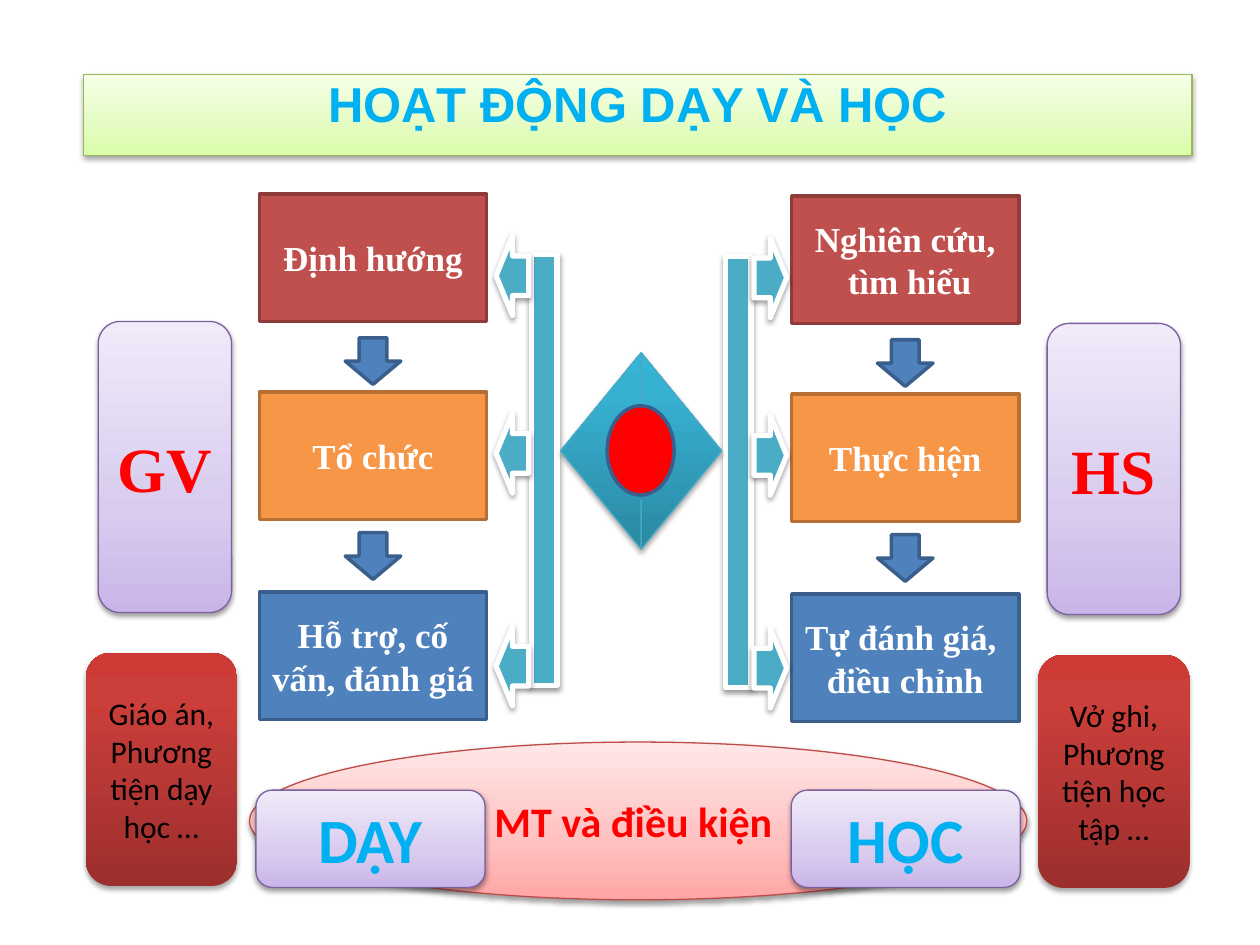
"""Builds the slide on teaching and learning activities."""
from lxml import etree
from pptx import Presentation
from pptx.dml.color import RGBColor
from pptx.enum import shapes, text
from pptx.oxml import ns
from pptx.util import Cm, Pt

G = shapes.MSO_SHAPE
WHITE = RGBColor(0xFF, 0xFF, 0xFF)
BLACK = RGBColor(0x00, 0x00, 0x00)
RED = RGBColor(0xFF, 0x00, 0x00)
SKY = RGBColor(0x00, 0xB0, 0xF0)
BRICK = RGBColor(0xC0, 0x50, 0x4D)
BRICK_EDGE = RGBColor(0x8E, 0x3B, 0x39)
ORANGE = RGBColor(0xF7, 0x96, 0x46)
ORANGE_EDGE = RGBColor(0xB7, 0x6F, 0x34)
BLUE = RGBColor(0x4F, 0x81, 0xBD)
BLUE_EDGE = RGBColor(0x3A, 0x5F, 0x8C)
TEAL = RGBColor(0x4B, 0xAC, 0xC6)
TEAL_EDGE = RGBColor(0x46, 0xAA, 0xC5)
PINK_EDGE = RGBColor(0xBF, 0x4C, 0x48)
GREEN_EDGE = RGBColor(0x98, 0xB9, 0x55)
PURPLE_EDGE = RGBColor(0x7D, 0x60, 0xA0)


def stops(middle, *colours):
    """Pair three colours with their gradient positions."""
    return list(zip((0, middle, 100), map(RGBColor.from_string, colours)))


PINKS = stops(35, "FFA6A5", "FFC0BF", "FFE7E7")
GREENS = stops(35, "DAFDA7", "E4FCC2", "F5FFE7")
PURPLES = stops(35, "C9B5E8", "D8CBEE", "F0EAF9")
TEALS = stops(80, "2A88A2", "37B1D2", "34B4D6")
REDS = stops(80, "9C2F2D", "CB3E3A", "CE3B37")

ROWS = (3.91, 7.9, 11.94)
DOWN_ROWS = (6.81, 10.74)
SIDE_ROWS = (5.23, 8.81, 13.1)
STEP_STYLES = ((BRICK, BRICK_EDGE), (ORANGE, ORANGE_EDGE), (BLUE, BLUE_EDGE))


def add_colour(parent, colour, alpha=None):
    """Append an RGB colour element, optionally transparent."""
    clr = etree.SubElement(parent, ns.qn("a:srgbClr"), val=str(colour))
    if alpha is not None:
        etree.SubElement(clr, ns.qn("a:alpha"), val=str(alpha * 1000))


def set_gradient(sp, colours):
    """Fill a shape with an upward gradient."""
    sp.fill.gradient()
    sp.fill.gradient_angle = 90
    gs_list = sp._element.spPr.find(".//" + ns.qn("a:gsLst"))
    for gs in list(gs_list):
        gs_list.remove(gs)
    for pos, colour in colours:
        gs = etree.SubElement(gs_list, ns.qn("a:gs"), pos=str(pos * 1000))
        add_colour(gs, colour)


def set_shadow(sp, alpha=38, dist=1.6):
    """Give a shape a soft shadow below it."""
    effects = sp._element.spPr.find(ns.qn("a:effectLst"))
    shadow = etree.SubElement(
        effects, ns.qn("a:outerShdw"), blurRad=str(Pt(3.1)),
        dist=str(Pt(dist)), dir="5400000", rotWithShape="0")
    add_colour(shadow, BLACK, alpha)


def add_box(s, kind, at, fill, edge=None, width=0.75):
    """Add a preset shape with a plain or gradient fill."""
    sp = s.shapes.add_shape(kind, *map(Cm, at))
    sp.shadow.inherit = False
    if isinstance(fill, list):
        set_gradient(sp, fill)
    else:
        sp.fill.solid()
        sp.fill.fore_color.rgb = fill
    if edge is None:
        sp.line.fill.background()
    else:
        sp.line.color.rgb = edge
        sp.line.width = Pt(width)
    return sp


def add_text(sp, lines, size, font, colour, bold=True):
    """Write centred paragraphs into a shape."""
    tf = sp.text_frame
    tf.word_wrap = True
    tf.vertical_anchor = text.MSO_ANCHOR.MIDDLE
    for i, line in enumerate(lines):
        p = tf.paragraphs[0] if i == 0 else tf.add_paragraph()
        p.alignment = text.PP_ALIGN.CENTER
        r = p.add_run()
        r.text = line
        r.font.size = Pt(size)
        r.font.name = font
        r.font.bold = bold
        r.font.color.rgb = colour


def add_title(s):
    """Add the title banner."""
    sp = add_box(s, G.RECTANGLE, (1.68, 1.5, 22.35, 1.63), GREENS, GREEN_EDGE)
    set_shadow(sp)
    add_text(sp, ["HOẠT ĐỘNG DẠY VÀ HỌC"], 28, "Arial", SKY)
    sp.text_frame.vertical_anchor = text.MSO_ANCHOR.TOP
    sp.text_frame.paragraphs[0].line_spacing = 0.9


def add_steps(s, x, dy, steps):
    """Add the three steps of one role and the arrows between them."""
    for y, lines, (fill, edge) in zip(ROWS, steps, STEP_STYLES):
        sp = add_box(s, G.RECTANGLE, (x, y + dy, 4.58, 2.57), fill, edge, 2)
        add_text(sp, lines, 20, "Times New Roman", WHITE)
    for y in DOWN_ROWS:
        add_box(s, G.DOWN_ARROW, (x + 1.73, y + dy, 1.12, 0.94),
                BLUE, BLUE_EDGE, 2)


def add_bracket(s, bar_x, arrow_x, dy, rotation):
    """Add a vertical bar with three arrows towards the steps."""
    bar = add_box(s, G.RECTANGLE, (bar_x, 5.13 + dy, 0.51, 8.69), TEAL, WHITE, 3)
    set_shadow(bar)
    for y in SIDE_ROWS:
        sp = add_box(s, G.DOWN_ARROW, (arrow_x, y + dy, 1.6, 0.66),
                     TEAL, WHITE, 3)
        sp.rotation = rotation
        set_shadow(sp)


def add_label(s, at, label, size, font, colour):
    """Add a rounded purple label."""
    sp = add_box(s, G.ROUNDED_RECTANGLE, at, PURPLES, PURPLE_EDGE)
    set_shadow(sp)
    add_text(sp, [label], size, font, colour)


def add_resources(s, x, y, lines):
    """Add a red card that lists resources."""
    sp = add_box(s, G.ROUNDED_RECTANGLE, (x, y, 3.05, 4.7), REDS)
    set_shadow(sp, 35, 1.8)
    add_text(sp, lines, 18, "Calibri", BLACK, False)


def add_conditions(s):
    """Add the wide ellipse for the environment."""
    sp = add_box(s, G.OVAL, (5.03, 14.96, 15.67, 3.18), PINKS, PINK_EDGE)
    set_shadow(sp)
    add_text(sp, ["MT và điều kiện "], 24, "Calibri", RED)


def add_hub(s):
    """Add the central double arrow with its red core."""
    sp = add_box(s, G.LEFT_RIGHT_ARROW, (11.3, 7.11, 3.25, 3.96),
                 TEALS, TEAL_EDGE)
    set_shadow(sp, 35, 1.8)
    add_box(s, G.OVAL, (12.24, 8.18, 1.35, 1.8), RED, BLUE_EDGE, 2)


def main():
    """Build and save the slide."""
    prs = Presentation()
    prs.slide_width, prs.slide_height = Cm(25.4), Cm(19.05)
    s = prs.slides.add_slide(prs.slide_layouts[6])
    dy = 0.04
    add_conditions(s)
    add_title(s)
    add_steps(s, 5.23, 0, (["Định hướng"], ["Tổ chức"],
                           ["Hỗ trợ, cố vấn, đánh giá"]))
    add_bracket(s, 10.72, 9.53, 0, 90)
    add_label(s, (1.98, 6.48, 2.69, 5.87), "GV", 36, "Times New Roman", RED)
    add_steps(s, 15.96, dy, (["Nghiên cứu,", " tìm hiểu"], ["Thực hiện"],
                             ["Tự đánh giá, ", "điều chỉnh"]))
    add_bracket(s, 14.63, 14.73, dy, 270)
    add_label(s, (21.11, 6.48 + dy, 2.69, 5.87), "HS", 36,
              "Times New Roman", RED)
    add_hub(s)
    for x, label in ((5.16, "DẠY"), (15.95, "HỌC")):
        add_label(s, (x, 15.93, 4.62, 1.96), label, 36, "Calibri", SKY)
    add_resources(s, 1.73, 13.16, ["Giáo án,", "Phương tiện dạy học …"])
    add_resources(s, 20.93, 13.16 + dy, ["Vở ghi,", "Phương tiện học tập …"])
    prs.save("out.pptx")


if __name__ == "__main__":
    main()
